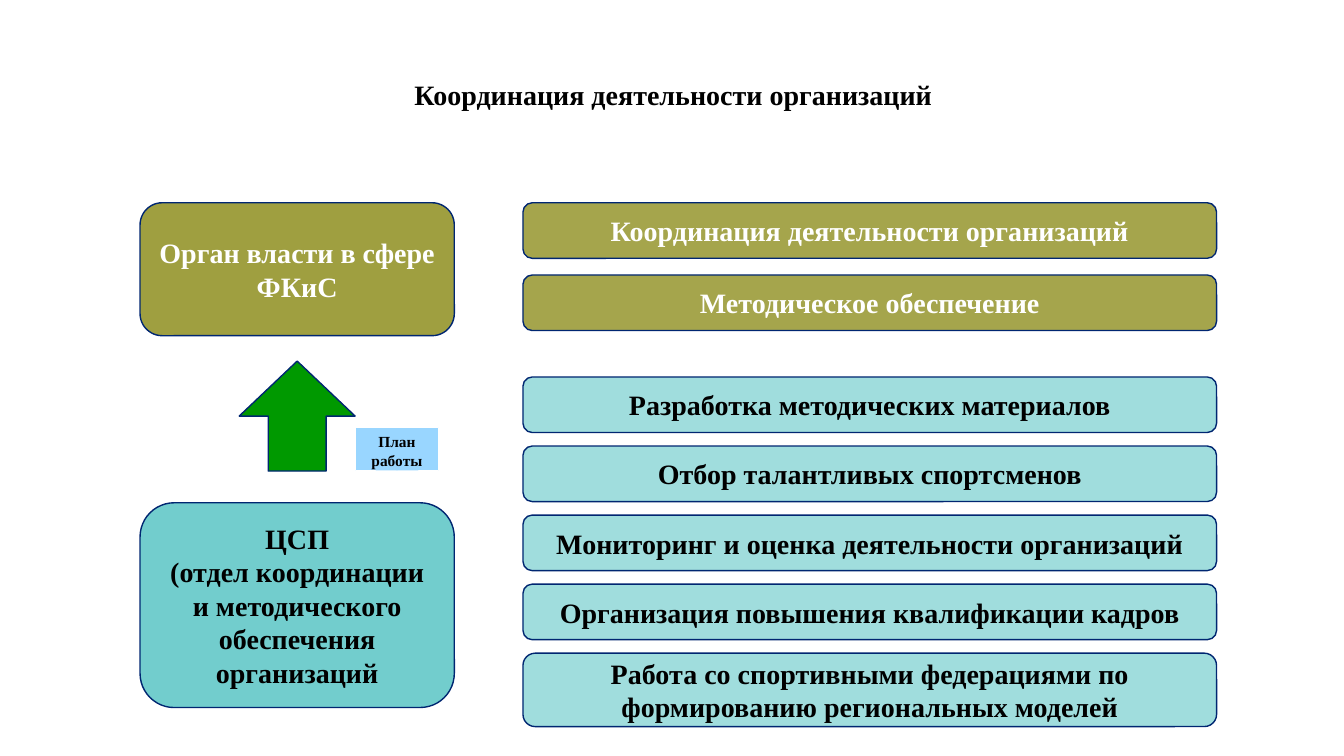
import dataclasses

import pptx
import pptx.dml.color
import pptx.enum.shapes
import pptx.enum.text
import pptx.oxml.ns
import pptx.util
from lxml import etree

Cm, Pt = pptx.util.Cm, pptx.util.Pt
RGBColor = pptx.dml.color.RGBColor
Shape = pptx.enum.shapes.MSO_SHAPE
Align, Anchor = pptx.enum.text.PP_ALIGN, pptx.enum.text.MSO_ANCHOR

HEADING = "Координация деятельности организаций"
AUTHORITY = ["Орган власти в сфере ФКиС"]
CENTRE = ["ЦСП", "(отдел координации и методического обеспечения организаций"]
PLAN = ["План работы"]
AUTHORITY_TASKS = ["Координация деятельности организаций", "Методическое обеспечение"]
CENTRE_TASKS = [
    "Разработка методических материалов",
    "Отбор талантливых спортсменов",
    "Мониторинг и оценка деятельности организаций",
    "Организация повышения квалификации кадров",
    "Работа со спортивными федерациями по формированию региональных моделей",
]


@dataclasses.dataclass(frozen=True)
class Theme:
    font: str = "Times New Roman"
    size: int = 20
    small: int = 11
    black: str = "000000"
    white: str = "FFFFFF"
    olive: str = "808000"
    teal: str = "43BDBD"
    green: str = "009900"
    sky: str = "99D6FF"
    navy: str = "002671"


THEME = Theme()

# All lengths in centimetres
TOP = 5.11
LEFT_X, LEFT_W = 3.53, 7.92
TASK_X, TASK_W, TASK_H = 13.18, 17.48, 1.4
LAST_TASK_H = 1.85
AUTHORITY_PITCH = 1.82
CENTRE_TOP, CENTRE_PITCH = 9.5, 1.74
ARROW_W, ARROW_H = 2.92, 2.77


def write(frame, paragraphs, color, size=THEME.size):
    frame.word_wrap = True
    for index, text in enumerate(paragraphs):
        paragraph = frame.paragraphs[0] if index == 0 else frame.add_paragraph()
        paragraph.alignment = Align.CENTER
        run = paragraph.add_run()
        run.text = text
        run.font.name = THEME.font
        run.font.size = Pt(size)
        run.font.bold = True
        run.font.color.rgb = RGBColor.from_string(color)


def add_block(slide, kind, box, fill, opacity=100, line=THEME.navy, line_width=1):
    """Add a filled shape; box is left, top, width, height and opacity a percentage."""
    block = slide.shapes.add_shape(kind, *(Cm(length) for length in box))
    block.shadow.inherit = False
    block.fill.solid()
    block.fill.fore_color.rgb = RGBColor.from_string(fill)
    block.line.color.rgb = RGBColor.from_string(line)
    block.line.width = Pt(line_width)
    if opacity < 100:
        qn = pptx.oxml.ns.qn
        fill_color = block.element.spPr.find(qn("a:solidFill")).find(qn("a:srgbClr"))
        etree.SubElement(fill_color, qn("a:alpha")).set("val", str(opacity * 1000))
    return block


def add_card(slide, paragraphs, box, fill, opacity, color):
    card = add_block(slide, Shape.ROUNDED_RECTANGLE, box, fill, opacity)
    card.text_frame.vertical_anchor = Anchor.MIDDLE
    write(card.text_frame, paragraphs, color)


def add_heading(slide):
    heading = slide.shapes.title
    heading.left, heading.top = Cm(1.73), Cm(1.73)
    heading.width, heading.height = Cm(30.48), Cm(1.4)
    heading.text_frame.vertical_anchor = Anchor.MIDDLE
    write(heading.text_frame, [HEADING], THEME.black)
    heading.text_frame.paragraphs[0].line_spacing = 0.9


def add_tasks(slide):
    for row, task in enumerate(AUTHORITY_TASKS):
        box = (TASK_X, TOP + row * AUTHORITY_PITCH, TASK_W, TASK_H)
        add_card(slide, [task], box, THEME.olive, 70, THEME.white)
    for row, task in enumerate(CENTRE_TASKS):
        height = LAST_TASK_H if task == CENTRE_TASKS[-1] else TASK_H
        box = (TASK_X, CENTRE_TOP + row * CENTRE_PITCH, TASK_W, height)
        add_card(slide, [task], box, THEME.teal, 50, THEME.black)


def add_bodies(slide):
    add_card(slide, AUTHORITY, (LEFT_X, TOP, LEFT_W, 3.35), THEME.olive, 75, THEME.white)
    add_card(slide, CENTRE, (LEFT_X, 12.67, LEFT_W, 5.16), THEME.teal, 75, THEME.black)

    arrow_x = LEFT_X + (LEFT_W - ARROW_W) / 2
    add_block(slide, Shape.UP_ARROW, (arrow_x, 9.1, ARROW_W, ARROW_H), THEME.green)

    plan_box = (arrow_x + ARROW_W, 10.77, 2.11, 1.1)
    plan = add_block(slide, Shape.RECTANGLE, plan_box, THEME.sky,
                     line=THEME.white, line_width=0.75)
    plan.text_frame.vertical_anchor = Anchor.TOP
    write(plan.text_frame, PLAN, THEME.black, THEME.small)


def main():
    deck = pptx.Presentation()
    deck.slide_width, deck.slide_height = Cm(33.87), Cm(19.05)
    slide = deck.slides.add_slide(deck.slide_layouts.get_by_name("Title Only"))
    add_heading(slide)
    add_tasks(slide)
    add_bodies(slide)
    deck.save("out.pptx")


if __name__ == "__main__":
    main()
